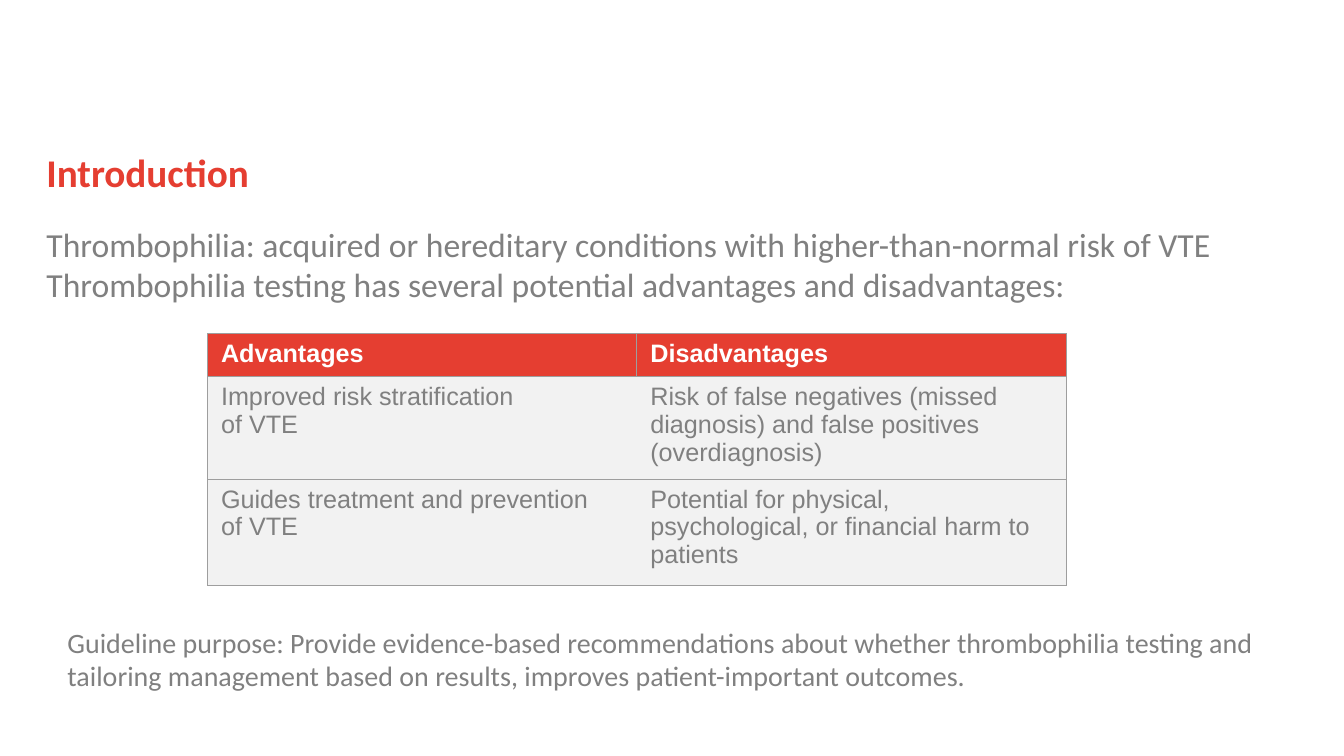
from lxml import etree
from pptx import Presentation
from pptx import util as u
from pptx.dml.color import RGBColor
from pptx.enum import text
from pptx.oxml.ns import qn

COLORS = {"red": "E53E31", "gray": "808080", "white": "FFFFFF",
          "panel": "F2F2F2", "rule": "9E9E9E"}


class SlideBuilder:
    """Holds the colours and the current page."""

    def __init__(self, page, colors):
        self.page = page
        self.colors = colors

    def color(self, name):
        return RGBColor.from_string(self.colors[name])

    def style(self, para, size, color, face, bold=False):
        font = para.font
        font.name, font.size, font.bold = face, u.Pt(size), bold
        font.color.rgb = self.color(color)

    def text(self, left, top, width, height, lines, size, color,
             bold=False, inset=(0, 0)):
        box = self.page.shapes.add_textbox(
            u.Cm(left), u.Cm(top), u.Cm(width), u.Cm(height))
        frame = box.text_frame
        frame.word_wrap = True
        frame.vertical_anchor = text.MSO_ANCHOR.TOP
        frame.margin_left = frame.margin_right = u.Cm(inset[0])
        frame.margin_top = frame.margin_bottom = u.Cm(inset[1])
        frame.text = "\n".join(lines)
        for para in frame.paragraphs:
            self.style(para, size, color, "Calibri", bold)

    def borders(self, cell, sides):
        properties = cell._tc.get_or_add_tcPr()
        for position, side in enumerate("LRTB"):
            line = etree.Element(qn(f"a:ln{side}"), w=str(u.Pt(0.75)))
            if side in sides:
                fill = etree.SubElement(line, qn("a:solidFill"))
                etree.SubElement(fill, qn("a:srgbClr"), val=self.colors["rule"])
            else:
                etree.SubElement(line, qn("a:noFill"))
            properties.insert(position, line)

    def table(self, left, top, column_width, row_heights, rows):
        columns = len(rows[0])
        table = self.page.shapes.add_table(
            len(rows), columns, u.Cm(left), u.Cm(top),
            u.Cm(column_width * columns), u.Cm(sum(row_heights))).table
        table.horz_banding = False
        for column in table.columns:
            column.width = u.Cm(column_width)
        for r, (height, labels) in enumerate(zip(row_heights, rows)):
            table.rows[r].height = u.Cm(height)
            header = r == 0
            for c, label in enumerate(labels):
                cell = table.cell(r, c)
                cell.text = label
                cell.margin_left = cell.margin_right = u.Cm(0.34)
                cell.margin_top = cell.margin_bottom = u.Cm(0.17)
                cell.fill.solid()
                cell.fill.fore_color.rgb = self.color("red" if header else "panel")
                para = cell.text_frame.paragraphs[0]
                para.line_spacing = 0.98
                self.style(para, 18, "white" if header else "gray", "Arial", header)
                # Body rows have no rule between the columns
                outer = ("L" if c == 0 else "") + ("R" if c == columns - 1 else "")
                self.borders(cell, "LRTB" if header else outer + "TB")


def main():
    deck = Presentation()
    deck.slide_width, deck.slide_height = u.Cm(33.87), u.Cm(19.05)
    builder = SlideBuilder(deck.slides.add_slide(deck.slide_layouts[6]), COLORS)

    # Title and opening statements
    builder.text(1.17, 3.73, 30.48, 1.98, ["Introduction"], 28, "red", bold=True)
    builder.text(1.17, 5.64, 30.48, 10.97, [
        "Thrombophilia: acquired or hereditary conditions with higher-than-normal risk of VTE",
        "Thrombophilia testing has several potential advantages and disadvantages:",
    ], 24, "gray")

    # Advantages and disadvantages
    builder.table(5.23, 8.41, 10.82, [1.02, 2.44, 2.67], [
        ["Advantages", "Disadvantages"],
        ["Improved risk stratification \vof VTE",
         "Risk of false negatives (missed diagnosis) and false positives (overdiagnosis)"],
        ["Guides treatment and prevention \vof VTE",
         "Potential for physical, psychological, or financial harm to patients"],
    ])

    # Guideline purpose
    builder.text(1.45, 15.62, 30.99, 2.82, [
        "Guideline purpose: Provide evidence-based recommendations about whether "
        "thrombophilia testing and tailoring management based on results, improves "
        "patient-important outcomes.",
    ], 20, "gray", inset=(0.25, 0.13))

    deck.save("out.pptx")


if __name__ == "__main__":
    main()
